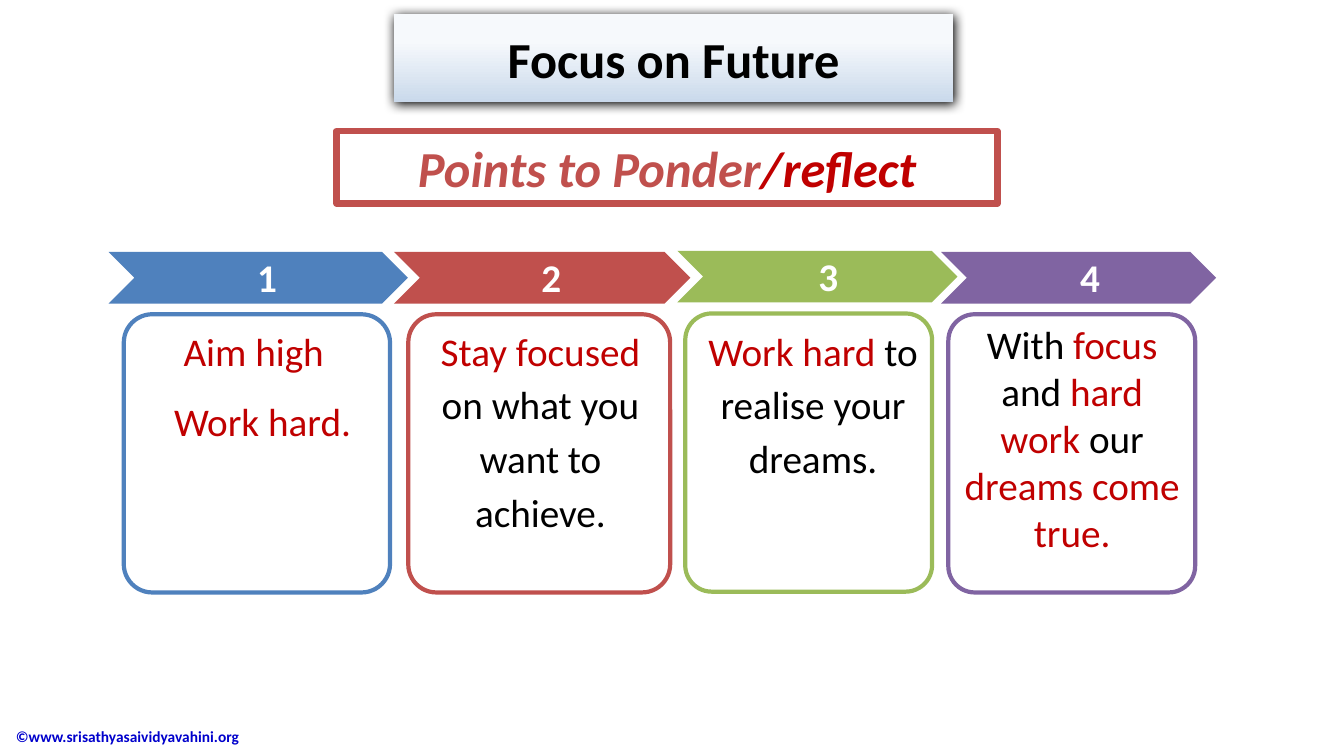
"""Build the "Focus on Future" slide with four numbered reflection cards."""
from lxml.etree import SubElement
from pptx import Presentation
from pptx.dml.color import RGBColor
from pptx.enum.shapes import MSO_SHAPE as Shape
from pptx.enum.text import MSO_ANCHOR as Anchor, MSO_AUTO_SIZE as AutoSize, PP_ALIGN as Align
from pptx.oxml.ns import qn
from pptx.util import Cm, Pt

COLORS = {
    "blue": "4F81BD", "red": "C0504D", "green": "9BBB59", "purple": "8064A2",
    "accent": "C00000", "black": "000000", "white": "FFFFFF", "link": "0000CC",
    "banner_top": "F6F9FC", "banner_bottom": "CAD9EB",
}


def rgb(name):
    return RGBColor.from_string(COLORS[name])


def write(frame, paragraphs, size=28, bold=False, italic=False, align=Align.CENTER,
          line_spacing=None, gap=0, anchor=Anchor.TOP):
    frame.word_wrap = True
    frame.vertical_anchor = anchor
    for index, runs in enumerate(paragraphs):
        paragraph = frame.add_paragraph() if index else frame.paragraphs[0]
        paragraph.alignment = align
        if line_spacing:
            paragraph.line_spacing = line_spacing
        if index and gap:
            paragraph.space_before = Pt(gap)
        for text, color in runs:
            run = paragraph.add_run()
            run.text = text
            run.font.name = "Calibri"
            run.font.size = Pt(size)
            run.font.bold = bold
            run.font.italic = italic
            run.font.color.rgb = rgb(color)


class SlideBuilder:
    def __init__(self, slide):
        self.slide = slide

    def shape(self, kind, left, top, width, height, fill="white", line=None, weight=3):
        shape = self.slide.shapes.add_shape(kind, Cm(left), Cm(top), Cm(width), Cm(height))
        shape.shadow.inherit = False
        shape.fill.solid()
        shape.fill.fore_color.rgb = rgb(fill)
        if line:
            shape.line.color.rgb = rgb(line)
            shape.line.width = Pt(weight)
        else:
            shape.line.fill.background()
        return shape

    def text(self, left, top, width, height, paragraphs, grow=True, **style):
        box = self.slide.shapes.add_textbox(Cm(left), Cm(top), Cm(width), Cm(height))
        write(box.text_frame, paragraphs, **style)
        if grow:
            box.text_frame.auto_size = AutoSize.SHAPE_TO_FIT_TEXT

    def chevron(self, number, left, top, width, color):
        self.shape(Shape.CHEVRON, left, top, width, 1.3, color)
        self.text(left + 1.06, top - 0.08, width * 0.777, 1.45,
                  [[(str(number), "white")]], bold=True)

    def card(self, left, top, width, color, text_left, text_height, paragraphs, **style):
        card = self.shape(Shape.ROUNDED_RECTANGLE, left, top, width, 7.01, line=color)
        card.adjustments[0] = 0.107
        self.text(text_left, 7.95, width + 0.06, text_height, paragraphs, **style)

    def banner(self, left, top, width, height, paragraphs):
        banner = self.shape(Shape.RECTANGLE, left, top, width, height)
        banner.fill.gradient()
        banner.fill.gradient_angle = 270
        stops = ((0.31, "banner_top"), (1, "banner_bottom"))
        for stop, (position, color) in zip(banner.fill.gradient_stops, stops):
            stop.position = position
            stop.color.rgb = rgb(color)
        effects = banner.element.spPr.find(qn("a:effectLst"))
        shadow = SubElement(effects, qn("a:outerShdw"), blurRad=str(Pt(8.5)),
                            dist=str(Pt(1)), dir="5400000", algn="ctr", rotWithShape="0")
        SubElement(shadow, qn("a:srgbClr"), val=COLORS["black"])
        write(banner.text_frame, paragraphs, size=36, bold=True, anchor=Anchor.MIDDLE)


def main():
    presentation = Presentation()
    presentation.slide_width, presentation.slide_height = Cm(33.87), Cm(19.05)
    builder = SlideBuilder(presentation.slides.add_slide(presentation.slide_layouts[6]))

    builder.text(0.15, 18.03, 8.97, 1.04, [[("©www.srisathyasaividyavahini.org", "link")]],
                 grow=False, size=11, bold=True, align=Align.LEFT, anchor=Anchor.MIDDLE)

    chevrons = (
        (2.74, 6.35, 7.54, "blue"),
        (9.93, 6.35, 7.47, "red"),
        (17.07, 6.32, 7.06, "green"),
        (23.72, 6.35, 6.93, "purple"),
    )
    for number, chevron in enumerate(chevrons, start=1):
        builder.chevron(number, *chevron)

    builder.card(3.12, 7.92, 6.71, "blue", 3.12, 3.33,
                 [[("Aim high ", "accent")], [(" ", "black"), ("Work hard.", "accent")]],
                 line_spacing=1.14, gap=12)
    builder.card(10.29, 7.92, 6.6, "red", 10.29, 5.64,
                 [[("Stay focused ", "accent"), ("on what you want to achieve.", "black")]],
                 line_spacing=1.14)
    builder.card(17.27, 7.9, 6.22, "green", 17.35, 4.27,
                 [[("Work hard ", "accent"), ("to realise your dreams.", "black")]],
                 line_spacing=1.14)
    builder.card(23.9, 7.92, 6.22, "purple", 23.88, 6.25,
                 [[("With ", "black"), ("focus", "accent"), (" and ", "black"),
                   ("hard work ", "accent"), ("our ", "black"),
                   ("dreams come true.", "accent")]])

    subtitle = builder.shape(Shape.RECTANGLE, 8.48, 3.3, 16.66, 1.83, line="red", weight=4.5)
    write(subtitle.text_frame, [[("Points to Ponder", "red"), ("/reflect", "accent")]],
          size=36, bold=True, italic=True, anchor=Anchor.MIDDLE)
    builder.banner(9.93, 0.36, 14.1, 2.21, [[("Focus on Future", "black")]])

    presentation.save("out.pptx")


if __name__ == "__main__":
    main()
